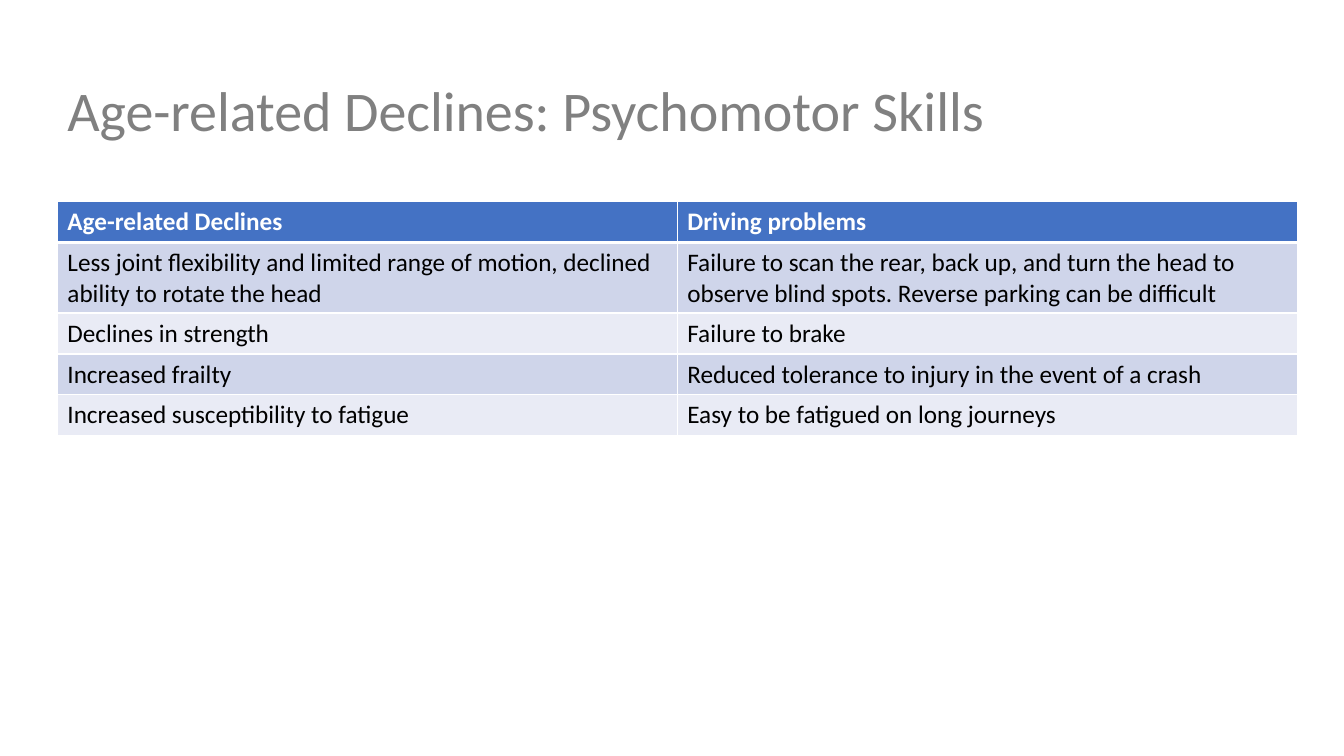
from lxml import etree
from pptx import Presentation
from pptx.dml.color import RGBColor
from pptx.enum import text
from pptx.oxml import ns
from pptx.util import Pt

COLORS = {
    "title": "808080",
    "header": "4472C4",
    "band_dark": "CFD5EA",
    "band_light": "E9EBF5",
    "white": "FFFFFF",
    "black": "000000",
}
LEFT, WIDTH = 41, 885.6
ROWS = [
    ("Age-related Declines", "Driving problems"),
    ("Less joint flexibility and limited range of motion, declined ability to rotate the head",
     "Failure to scan the rear, back up, and turn the head to observe blind spots. "
     "Reverse parking can be difficult"),
    ("Declines in strength", "Failure to brake"),
    ("Increased frailty", "Reduced tolerance to injury in the event of a crash"),
    ("Increased susceptibility to fatigue", "Easy to be fatigued on long journeys"),
]
ROW_HEIGHTS = [29.2, 50.4, 29.2, 29.2, 29.2]


class SlideBuilder:
    font = "Calibri"

    def __init__(self, slide):
        self.slide = slide

    def add_run(self, p, words, size, color, bold=False):
        r = p.add_run()
        r.text = words
        r.font.name = self.font
        r.font.size = Pt(size)
        r.font.bold = bold
        r.font.color.rgb = RGBColor.from_string(COLORS[color])

    def title(self, words, left, top, width, height):
        sp = self.slide.shapes.add_textbox(Pt(left), Pt(top), Pt(width), Pt(height))
        tf = sp.text_frame
        tf.word_wrap = True
        tf.vertical_anchor = text.MSO_ANCHOR.MIDDLE
        p = tf.paragraphs[0]
        p.line_spacing = 0.9
        self.add_run(p, words, 40, "title")

    def border(self, cell, side, width):
        tc_pr = cell._tc.get_or_add_tcPr()
        ln = etree.SubElement(tc_pr, ns.qn(f"a:ln{side}"), w=str(Pt(width)))
        fill = etree.SubElement(ln, ns.qn("a:solidFill"))
        etree.SubElement(fill, ns.qn("a:srgbClr"), val=COLORS["white"])

    def table(self, rows, heights, left, top, width):
        columns = len(rows[0])
        frame = self.slide.shapes.add_table(
            len(rows), columns, Pt(left), Pt(top), Pt(width), Pt(sum(heights)))
        table = frame.table
        for column in table.columns:
            column.width = Pt(width / columns)
        for i, (row, height) in enumerate(zip(rows, heights)):
            table.rows[i].height = Pt(height)
            header = i == 0
            band = "header" if header else "band_dark" if i % 2 else "band_light"
            for j, words in enumerate(row):
                cell = table.cell(i, j)
                # The rule under the header is thicker than the rest
                for side in "LRTB":
                    heavy = (header and side == "B") or (i == 1 and side == "T")
                    self.border(cell, side, 3 if heavy else 1)
                cell.fill.solid()
                cell.fill.fore_color.rgb = RGBColor.from_string(COLORS[band])
                self.add_run(cell.text_frame.paragraphs[0], words, 18,
                             "white" if header else "black", header)


def main():
    prs = Presentation()
    prs.slide_width, prs.slide_height = Pt(960), Pt(540)
    s = SlideBuilder(prs.slides.add_slide(prs.slide_layouts[6]))

    # Title
    s.title("Age-related Declines: Psychomotor Skills", LEFT, 28.8, WIDTH, 104.4)

    # Declines and the driving problems they cause
    s.table(ROWS, ROW_HEIGHTS, LEFT, 144, WIDTH)

    prs.save("out.pptx")


if __name__ == "__main__":
    main()
